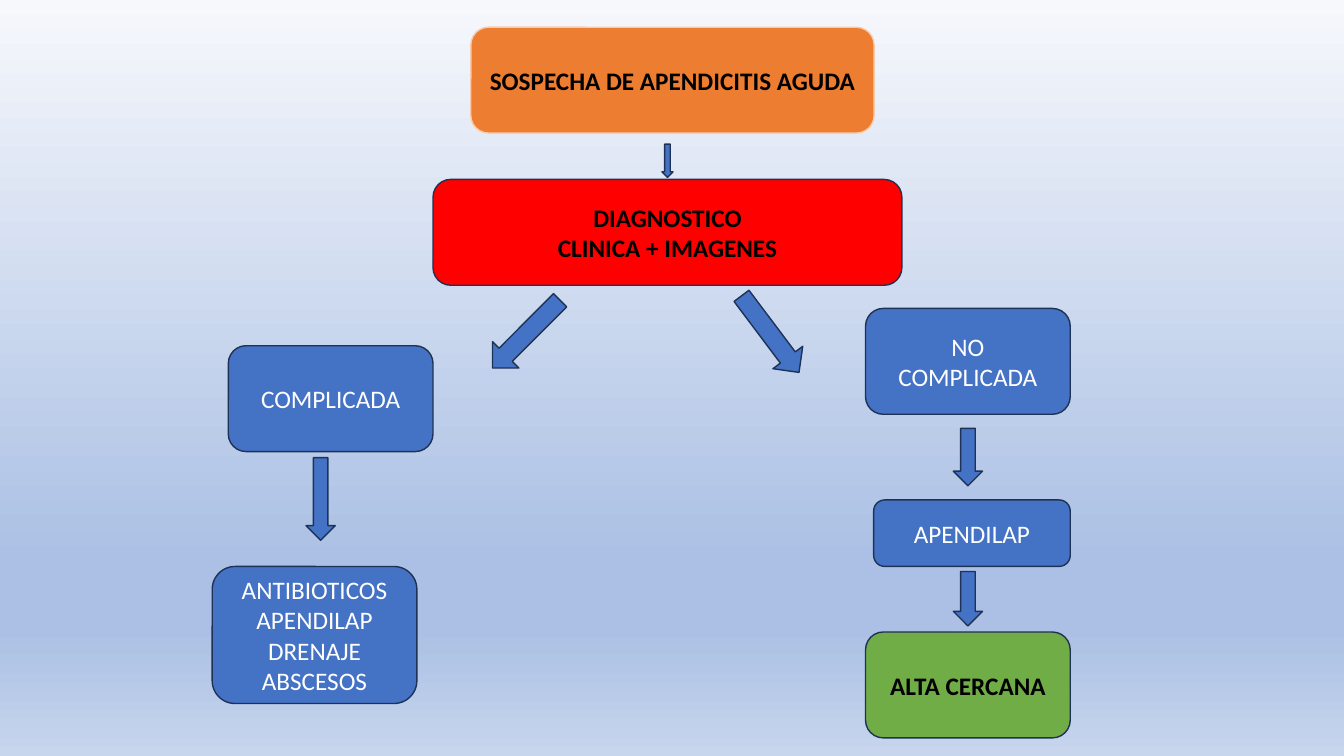
from pptx import Presentation
from pptx.dml.color import RGBColor
from pptx.enum import shapes as kinds, text as t
from pptx.oxml import parse_xml
from pptx.oxml.ns import nsdecls, qn
from pptx.util import Inches, Pt

COLORS = {
    "orange": "ED7D31", "peach": "F8CBAD", "red": "FF0000", "blue": "4472C4",
    "green": "70AD47", "navy": "1E3256", "black": "000000", "white": "FFFFFF",
}
BACKGROUND_STOPS = [(0, "F6F8FC"), (74, "ABC0E4"), (83, "ABC0E4"), (100, "C7D5ED")]

# Column centres, in inches
LEFT, MIDDLE, RIGHT = 3.2, 6.64, 9.6
STEP_W, STEP_H = 2.03, 1.05

# Lines, column, shift from its centre, top, width, height, fill, outline, bold black text
STEPS = [
    (["SOSPECHA DE APENDICITIS AGUDA"], MIDDLE, 0.03, 0.27, 4, STEP_H, "orange", "peach", True),
    (["DIAGNOSTICO", "CLINICA + IMAGENES"], MIDDLE, -0.02, 1.78, 4.65, STEP_H, "red", "navy", True),
    (["COMPLICADA"], LEFT, 0.08, 3.43, STEP_W, STEP_H, "blue", "navy", False),
    (["NO COMPLICADA"], RIGHT, 0, 3.06, STEP_W, STEP_H, "blue", "navy", False),
    (["APENDILAP"], RIGHT, 0.04, 4.96, 1.95, 0.66, "blue", "navy", False),
    (["ALTA CERCANA"], RIGHT, 0, 6.27, STEP_W, STEP_H, "green", "navy", True),
    (["ANTIBIOTICOS", "APENDILAP", "DRENAJE ABSCESOS"], LEFT, -0.08, 5.62, STEP_W, 1.36,
     "blue", "navy", False),
]
# Column, shift from its centre, top, width, height, rotation
ARROWS = [
    (MIDDLE, -0.02, 1.43, 0.11, 0.33, 0),
    (MIDDLE, -1.42, 2.84, 0.37, 0.95, 44.9),
    (MIDDLE, 1, 2.84, 0.37, 0.95, 323.1),
    (LEFT, -0.02, 4.54, 0.29, 0.82, 0),
    (RIGHT, 0, 4.25, 0.29, 0.57, 0),
    (RIGHT, 0, 5.67, 0.29, 0.54, 0),
]


def rgb(name):
    return RGBColor.from_string(COLORS[name])


def paint_background(slide):
    fill = slide.background.fill
    fill.gradient()
    fill.gradient_angle = 270
    stops = next(slide.element.iter(qn("a:gsLst")))
    for stop in list(stops):
        stops.remove(stop)
    for percent, color in BACKGROUND_STOPS:
        stops.append(parse_xml(
            f'<a:gs {nsdecls("a")} pos="{percent * 1000}"><a:srgbClr val="{color}"/></a:gs>'))


def add_centred(slide, kind, centre, top, width, height, fill, outline):
    """Add a flat shape centred horizontally on the given position."""
    shape = slide.shapes.add_shape(
        kind, Inches(centre - width / 2), Inches(top), Inches(width), Inches(height))
    shape.shadow.inherit = False
    shape.fill.solid()
    shape.fill.fore_color.rgb = rgb(fill)
    shape.line.color.rgb = rgb(outline)
    shape.line.width = Pt(1)
    return shape


def add_step(slide, lines, column, shift, top, width, height, fill, outline, strong):
    step = add_centred(slide, kinds.MSO_SHAPE.ROUNDED_RECTANGLE, column + shift,
                       top, width, height, fill, outline)
    frame = step.text_frame
    frame.word_wrap = True
    frame.vertical_anchor = t.MSO_ANCHOR.MIDDLE
    frame.text = "\n".join(lines)
    for paragraph in frame.paragraphs:
        paragraph.alignment = t.PP_ALIGN.CENTER
        paragraph.font.name = "Calibri"
        paragraph.font.size = Pt(18)
        paragraph.font.bold = strong
        paragraph.font.color.rgb = rgb("black" if strong else "white")


def main():
    deck = Presentation()
    deck.slide_width, deck.slide_height = Inches(13.33), Inches(7.5)
    slide = deck.slides.add_slide(deck.slide_layouts[6])
    paint_background(slide)
    for step in STEPS:
        add_step(slide, *step)
    for column, shift, top, width, height, rotation in ARROWS:
        arrow = add_centred(slide, kinds.MSO_SHAPE.DOWN_ARROW, column + shift,
                            top, width, height, "blue", "navy")
        arrow.rotation = rotation
    deck.save("out.pptx")


if __name__ == "__main__":
    main()
